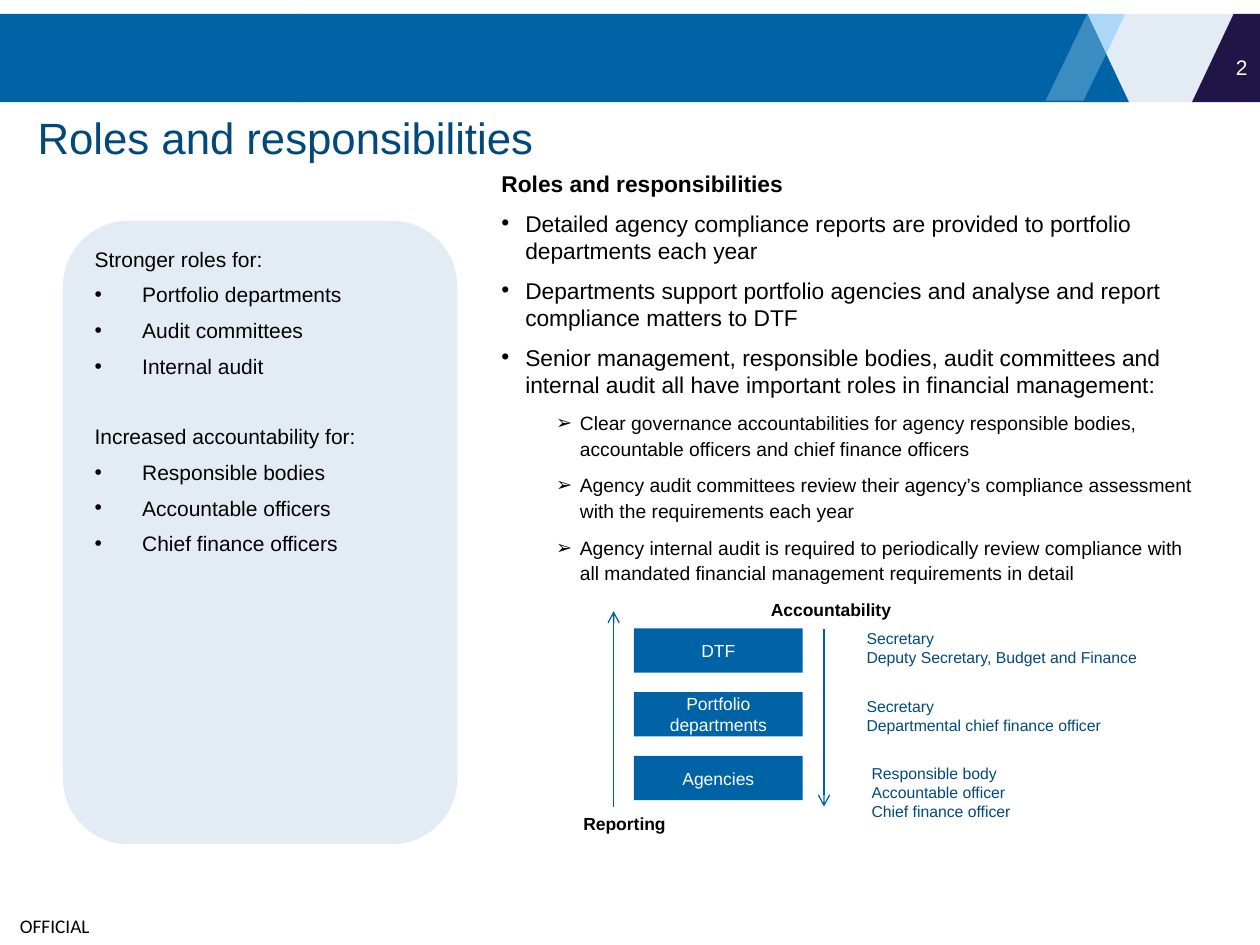
from lxml.etree import SubElement
from pptx import Presentation
from pptx.dml.color import RGBColor
from pptx.enum.shapes import MSO_CONNECTOR, MSO_SHAPE
from pptx.enum.text import MSO_ANCHOR as Anchor, PP_ALIGN as Align
from pptx.oxml.ns import qn
from pptx.util import Cm, Pt

COLORS = {
    "blue": "0063A6", "pale": "E3EBF4", "navy": "201547", "sky": "31ACFF",
    "ice": "C5EEFF", "title": "00497A", "role": "004A7D", "arrow": "0061A2",
    "black": "000000", "white": "FFFFFF",
}

# Banner: top and bottom edges, then (corners, colour, opacity in percent)
TOP, BOTTOM = 0.28, 2.06
BANNER_PANELS = [(21.79, 3.1, "pale"), (0, 6.12, "blue")]
BANNER_OUTLINES = [
    ([(21.92, TOP), (6.1, TOP), (6.1, BOTTOM), (22.76, BOTTOM)], "blue", 100),
    ([(22.68, TOP), (21.92, TOP), (22.3, 1.09)], "sky", 30),
    ([(21.92, TOP), (21.08, 2.03), (21.84, 2.03), (22.3, 1.09)], "ice", 30),
    ([(24.87, TOP), (24.03, BOTTOM), (25.4, BOTTOM), (25.4, TOP)], "navy", 100),
]

TITLE = "Roles and responsibilities"
ROLE_GROUPS = [
    ("Stronger roles for:",
     ["Portfolio departments", "Audit committees", "Internal audit"]),
    ("Increased accountability for:",
     ["Responsible bodies", "Accountable officers", "Chief finance officers"]),
]
DUTIES = [
    "Detailed agency compliance reports are provided to portfolio departments each year",
    "Departments support portfolio agencies and analyse and report compliance matters to DTF",
    "Senior management, responsible bodies, audit committees and internal audit "
    "all have important roles in financial management:",
]
GOVERNANCE = [
    "Clear governance accountabilities for agency responsible bodies, "
    "accountable officers and chief finance officers",
    "Agency audit committees review their agency’s compliance assessment "
    "with the requirements each year",
    "Agency internal audit is required to periodically review compliance with "
    "all mandated financial management requirements in detail",
]
# Tier name, then left, top, height and lines of the officers beside it
TIERS = [
    ("DTF", 17.22, 12.55, 1.02, ["Secretary", "Deputy Secretary, Budget and Finance"]),
    ("Portfolio departments", 17.22, 13.92, 1.02,
     ["Secretary", "Departmental chief finance officer"]),
    ("Agencies", 17.32, 15.27, 1.42,
     ["Responsible body", "Accountable officer", "Chief finance officer"]),
]
TIER_LEFT, TIER_TOP, TIER_STEP = 12.78, 12.67, 1.285
TIER_WIDTH, TIER_HEIGHT = 3.4, 0.89
ARROWS = [(12.37, 16.26, 12.32), (16.61, 12.67, 16.26)]  # x, from y, to y
ARROW_LABELS = [("Reporting", 11.51, 16.26, 2.84), ("Accountability", 15.29, 11.96, 3.05)]

prs = Presentation()
prs.slide_width, prs.slide_height = Cm(25.4), Cm(19.05)
slide = prs.slides.add_slide(prs.slide_layouts[6])
shapes = slide.shapes


def rgb(name):
    return RGBColor.from_string(COLORS[name])


def paint(shape, color, opacity=100):
    shape.shadow.inherit = False
    shape.fill.solid()
    shape.fill.fore_color.rgb = rgb(color)
    shape.line.fill.background()
    if opacity < 100:
        srgb = shape.fill._xPr.find(f".//{qn('a:srgbClr')}")
        SubElement(srgb, qn("a:alpha")).set("val", str(opacity * 1000))
    return shape


def add_block(box, color, preset=MSO_SHAPE.RECTANGLE):
    return paint(shapes.add_shape(preset, *map(Cm, box)), color)


def write(shape, lines, size, color="black", bold=False, align=Align.LEFT,
          anchor=Anchor.TOP, font="Arial"):
    frame = shape.text_frame
    frame.word_wrap = True
    frame.vertical_anchor = anchor
    frame.text = "\n".join(lines)
    for paragraph in frame.paragraphs:
        paragraph.alignment = align
        style(paragraph, size, color, bold, font)
    return frame


def style(paragraph, size, color="black", bold=False, font="Arial"):
    for run in paragraph.runs:
        run.font.size, run.font.bold, run.font.name = Pt(size), bold, font
        run.font.color.rgb = rgb(color)


def add_text(box, lines, size, **look):
    return write(shapes.add_textbox(*map(Cm, box)), lines, size, **look)


def space(paragraph, before, after=3):
    paragraph.space_before, paragraph.space_after = Pt(before), Pt(after)


def add_bullet(paragraph, symbol, margin, hang):
    props = paragraph._p.get_or_add_pPr()
    props.set("marL", str(Cm(margin)))
    props.set("indent", str(-Cm(hang)))
    SubElement(props, qn("a:buFont")).set("typeface", "Arial")
    SubElement(props, qn("a:buChar")).set("char", symbol)


def add_arrow(x, start, end):
    arrow = shapes.add_connector(MSO_CONNECTOR.STRAIGHT, Cm(x), Cm(start), Cm(x), Cm(end))
    arrow.line.color.rgb = rgb("arrow")
    arrow.line.width = Pt(0.75)
    SubElement(arrow.line._get_or_add_ln(), qn("a:tailEnd")).set("type", "arrow")
    SubElement(arrow._element.spPr, qn("a:effectLst"))


# Banner, page number and marking
for left, width, color in BANNER_PANELS:
    add_block((left, TOP, width, BOTTOM - TOP), color)
for corners, color, opacity in BANNER_OUTLINES:
    start, *rest = [(Cm(x), Cm(y)) for x, y in corners]
    outline = shapes.build_freeform(*start)
    outline.add_line_segments(rest)
    paint(outline.convert_to_shape(), color, opacity)
add_text((24.33, 0.84, 1.07, 1.02), ["2"], 12, color="white",
         align=Align.RIGHT, anchor=Anchor.MIDDLE)
marking = add_text((0, 18.26, 2.21, 0.79), ["OFFICIAL"], 11, font="Calibri",
                   align=Align.CENTER, anchor=Anchor.MIDDLE)
marking.margin_left = marking.margin_right = marking.margin_top = marking.margin_bottom = 0
add_text((0.51, 1.9, 22.86, 1.73), [TITLE], 25, color="title", anchor=Anchor.MIDDLE)

# Left panel
panel = add_block((1.27, 4.45, 7.95, 12.57), "pale", MSO_SHAPE.ROUNDED_RECTANGLE)
role_lines = [line for heading, roles in ROLE_GROUPS for line in (heading, *roles)]
headings = [heading for heading, _ in ROLE_GROUPS]
for paragraph in write(panel, role_lines, 12).paragraphs:
    space(paragraph, 22.8 if paragraph.text == headings[1] else 3)
    if paragraph.text not in headings:
        add_bullet(paragraph, "•", 0.96, 0.96)

# Right column
column = add_text((9.86, 3.3, 14.68, 15.14), [TITLE, *DUTIES, *GOVERNANCE], 13)
for paragraph in column.paragraphs:
    space(paragraph, 4)
    if paragraph.text == TITLE:
        style(paragraph, 13, bold=True)
    elif paragraph.text in DUTIES:
        add_bullet(paragraph, "•", 0.48, 0.48)
    else:
        paragraph.level = 1
        paragraph.line_spacing = 1.1
        space(paragraph, 3.5)
        style(paragraph, 11)
        add_bullet(paragraph, "➢", 1.58, 0.48)

# Reporting and accountability chain
for row, (tier, left, top, height, officers) in enumerate(TIERS):
    block = add_block((TIER_LEFT, TIER_TOP + row * TIER_STEP, TIER_WIDTH, TIER_HEIGHT), "blue")
    write(block, [tier], 10, color="white", align=Align.CENTER, anchor=Anchor.MIDDLE)
    add_text((left, top, 6.6, height), officers, 9, color="role")
for x, start, end in ARROWS:
    add_arrow(x, start, end)
for label, left, top, width in ARROW_LABELS:
    add_text((left, top, width, 0.69), [label], 10, bold=True)

prs.save("out.pptx")
